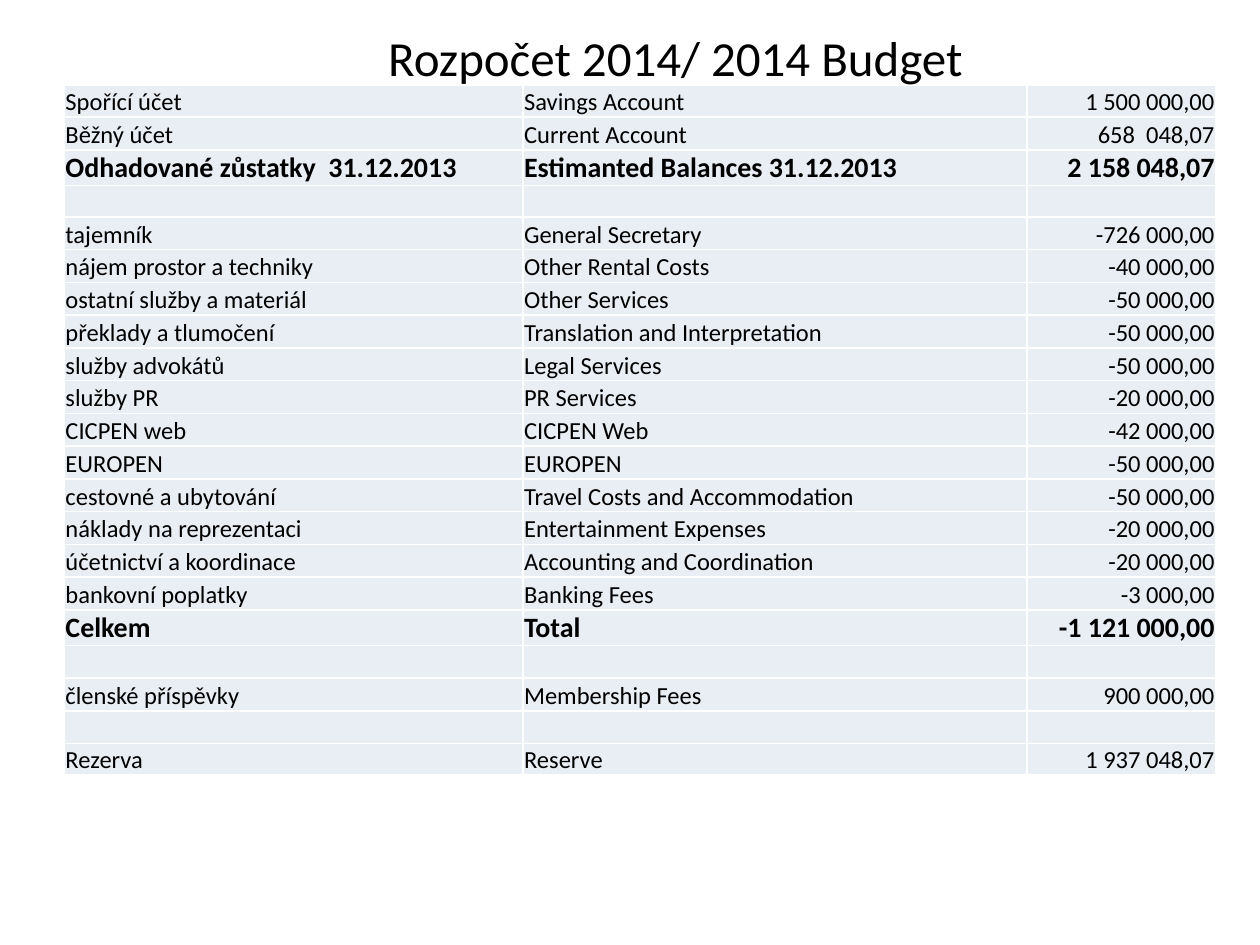
from dataclasses import dataclass

from lxml.etree import SubElement
from pptx import Presentation
from pptx.dml.color import RGBColor
from pptx.enum.text import MSO_ANCHOR, PP_ALIGN
from pptx.oxml import parse_xml
from pptx.oxml.ns import nsdecls, qn
from pptx.util import Inches, Pt


@dataclass(frozen=True)
class Theme:
    font: str = "Calibri"
    text: RGBColor = RGBColor(0x00, 0x00, 0x00)
    cell: RGBColor = RGBColor(0xE9, 0xED, 0xF4)
    border: str = "FFFFFF"
    title_size: int = 28
    entry_size: int = 14
    total_size: int = 16


THEME = Theme()
COLUMN_WIDTHS = (3.64, 4, 1.5)
ENTRY_HEIGHT, TIGHT_HEIGHT, TOTAL_HEIGHT = 0.26, 0.25, 0.28
BLANK = ("", "", "")
BUDGET = [
    ("Spořící účet", "Savings Account", "1 500 000,00"),
    ("Běžný účet", "Current Account", "658  048,07"),
    ("Odhadované zůstatky  31.12.2013", "Estimanted Balances 31.12.2013", "2 158 048,07"),
    BLANK,
    ("tajemník", "General Secretary", "-726 000,00"),
    ("nájem prostor a techniky", "Other Rental Costs", "-40 000,00"),
    ("ostatní služby a materiál", "Other Services", "-50 000,00"),
    ("překlady a tlumočení", "Translation and Interpretation", "-50 000,00"),
    ("služby advokátů", "Legal Services", "-50 000,00"),
    ("služby PR", "PR Services", "-20 000,00"),
    ("CICPEN web", "CICPEN Web", "-42 000,00"),
    ("EUROPEN", "EUROPEN", "-50 000,00"),
    ("cestovné a ubytování", "Travel Costs and Accommodation", "-50 000,00"),
    ("náklady na reprezentaci", "Entertainment Expenses", "-20 000,00"),
    ("účetnictví a koordinace", "Accounting and Coordination", "-20 000,00"),
    ("bankovní poplatky", "Banking Fees", "-3 000,00"),
    ("Celkem", "Total", "-1 121 000,00"),
    BLANK,
    ("členské příspěvky", "Membership Fees", "900 000,00"),
    BLANK,
    ("Rezerva", "Reserve", "1 937 048,07"),
]
TOTAL_ROWS = {2, 16}
TIGHT_ROWS = {0, 3, len(BUDGET) - 1}


def row_height(index):
    if index in TOTAL_ROWS:
        return TOTAL_HEIGHT
    return TIGHT_HEIGHT if index in TIGHT_ROWS else ENTRY_HEIGHT


def add_run(paragraph, text, size, bold=False):
    run = paragraph.add_run()
    run.text = text
    run.font.name = THEME.font
    run.font.size = Pt(size)
    run.font.bold = bold
    run.font.color.rgb = THEME.text


def add_title(slide, text):
    title = slide.shapes.add_textbox(Inches(1.22), Inches(0.3), Inches(8.28), Inches(0.3))
    frame = title.text_frame
    frame.word_wrap = True
    frame.vertical_anchor = MSO_ANCHOR.MIDDLE
    paragraph = frame.paragraphs[0]
    paragraph.alignment = PP_ALIGN.CENTER
    add_run(paragraph, text, THEME.title_size)


def set_borders(cell):
    properties = cell._tc.get_or_add_tcPr()
    for position, side in enumerate(("lnL", "lnR", "lnT", "lnB")):
        properties.insert(position, parse_xml(
            f'<a:{side} {nsdecls("a")} w="{Pt(1)}"><a:solidFill>'
            f'<a:srgbClr val="{THEME.border}"/></a:solidFill></a:{side}>'))


def set_empty_size(paragraph, size):
    """Keep a cell without text from growing to the default type size."""
    SubElement(paragraph._p, qn("a:endParaRPr"), sz=str(size * 100))


def fill_cell(cell, text, is_total, is_amount):
    cell.fill.solid()
    cell.fill.fore_color.rgb = THEME.cell
    set_borders(cell)
    cell.vertical_anchor = MSO_ANCHOR.BOTTOM
    cell.margin_left = cell.margin_top = cell.margin_right = Inches(0.01)
    cell.margin_bottom = Inches(0)
    paragraph = cell.text_frame.paragraphs[0]
    if not text:
        set_empty_size(paragraph, THEME.entry_size)
        return
    if is_amount:
        paragraph.alignment = PP_ALIGN.RIGHT
    size = THEME.total_size if is_total else THEME.entry_size
    add_run(paragraph, text, size, is_total)


def add_budget_table(slide):
    heights = [row_height(index) for index in range(len(BUDGET))]
    table = slide.shapes.add_table(
        len(BUDGET), len(COLUMN_WIDTHS), Inches(0.51), Inches(0.68),
        Inches(sum(COLUMN_WIDTHS)), Inches(sum(heights))).table
    table.first_row = False
    table.horz_banding = False
    for column, width in zip(table.columns, COLUMN_WIDTHS):
        column.width = Inches(width)
    for row_index, entry in enumerate(BUDGET):
        table.rows[row_index].height = Inches(heights[row_index])
        for column_index, text in enumerate(entry):
            fill_cell(table.cell(row_index, column_index), text,
                      row_index in TOTAL_ROWS, column_index == 2)


def main():
    presentation = Presentation()
    presentation.slide_width = Inches(10)
    presentation.slide_height = Inches(7.5)
    slide = presentation.slides.add_slide(presentation.slide_layouts[6])
    add_budget_table(slide)
    add_title(slide, "Rozpočet 2014/ 2014 Budget")
    presentation.save("out.pptx")


if __name__ == "__main__":
    main()
